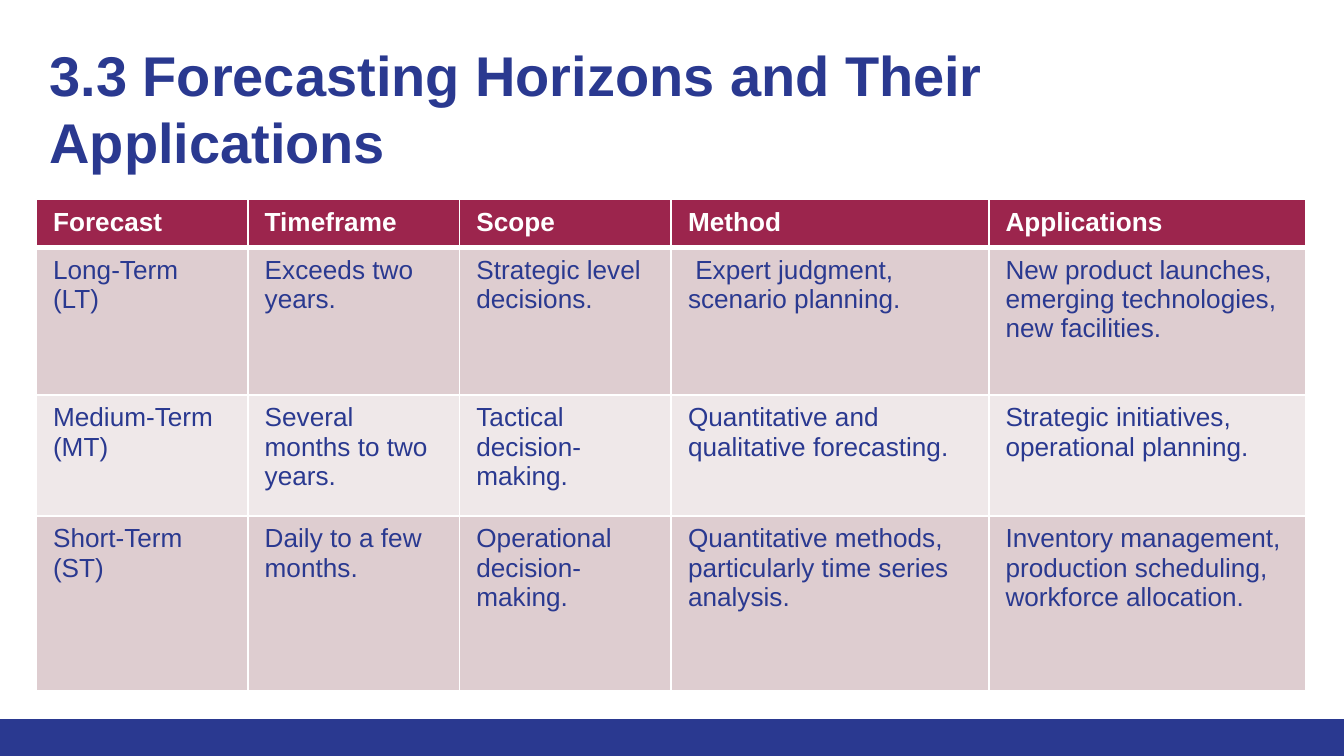
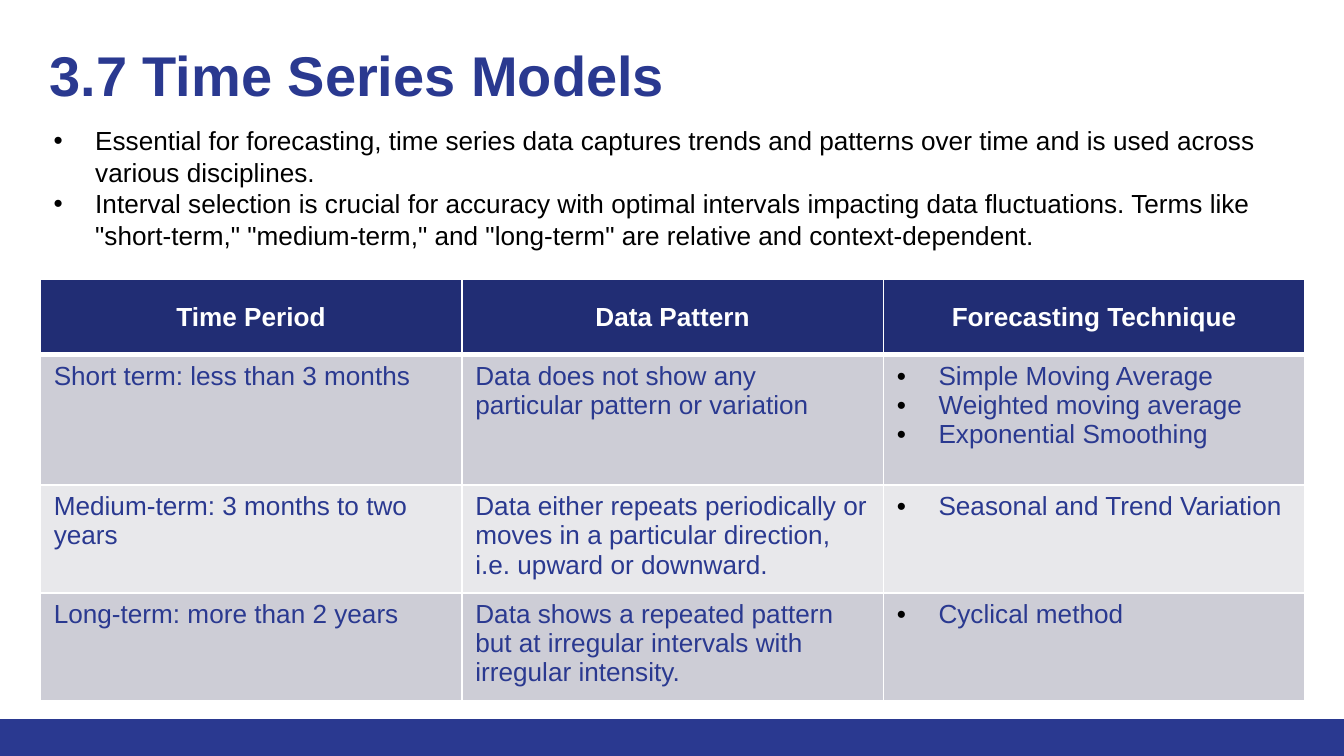
from dataclasses import dataclass

from lxml import etree
from pptx import Presentation
from pptx.dml.color import RGBColor
from pptx.enum import shapes, text
from pptx.oxml import ns
from pptx.util import Inches, Pt

BLUE = RGBColor(0x2A, 0x39, 0x90)
NAVY = RGBColor(0x21, 0x2D, 0x74)
CRIMSON = RGBColor(0x9C, 0x25, 0x4D)
ROSE = RGBColor(0xDE, 0xCD, 0xD0)
PALE_ROSE = RGBColor(0xEF, 0xE8, 0xE9)
GREY = RGBColor(0xCD, 0xCD, 0xD6)
PALE_GREY = RGBColor(0xE8, 0xE8, 0xEB)
WHITE = RGBColor(0xFF, 0xFF, 0xFF)
BLACK = RGBColor(0x00, 0x00, 0x00)

FONT = "Arial"
WIDTH = 10
HEIGHT = WIDTH * 9 / 16
BAND_TOP = 5.35
BULLET_INDENT = Inches(0.31)


@dataclass(frozen=True)
class TableStyle:
    header: RGBColor
    odd: RGBColor
    even: RGBColor
    margin_x: float = 0.1
    margin_y: float = 0.05
    centred_header: bool = False


@dataclass(frozen=True)
class TableContent:
    left: float
    top: float
    width: float
    column_shares: list[int]
    heights: list[float]
    rows: list[list[str | list[str]]]
    style: TableStyle


HORIZONS = TableContent(
    0.27, 1.48, 9.45, [2, 2, 2, 3, 3], [0.32, 1.1, 0.9, 1.3],
    [
        ["Forecast", "Timeframe", "Scope", "Method", "Applications"],
        ["Long-Term (LT)", "Exceeds two years.", "Strategic level decisions.",
         " Expert judgment, scenario planning.",
         "New product launches, emerging technologies, new facilities."],
        ["Medium-Term (MT)", "Several months to two years.", "Tactical decision-making.",
         "Quantitative and qualitative forecasting.",
         "Strategic initiatives, operational planning."],
        ["Short-Term (ST)", "Daily to a few months.", "Operational decision-making.",
         "Quantitative methods, particularly time series analysis.",
         "Inventory management, production scheduling, workforce allocation."],
    ],
    TableStyle(CRIMSON, ROSE, PALE_ROSE, margin_x=1 / 8, margin_y=1 / 16),
)

MODELS = TableContent(
    0.3, 2.08, 9.41, [1, 1, 1], [0.56, 0.97, 0.71, 0.71],
    [
        ["Time Period", "Data Pattern", "Forecasting Technique"],
        ["Short term: less than 3 months",
         "Data does not show any particular pattern or variation",
         ["Simple Moving Average", "Weighted moving average", "Exponential Smoothing"]],
        ["Medium-term: 3 months to two years",
         "Data either repeats periodically or moves in a particular direction, "
         "i.e. upward or downward.",
         ["Seasonal and Trend Variation"]],
        ["Long-term: more than 2 years",
         "Data shows a repeated pattern but at irregular intervals with irregular intensity.",
         ["Cyclical method"]],
    ],
    TableStyle(NAVY, GREY, PALE_GREY, centred_header=True),
)

MODEL_NOTES = [
    "Essential for forecasting, time series data captures trends and patterns over time "
    "and is used across various disciplines.",
    "Interval selection is crucial for accuracy with optimal intervals impacting data "
    'fluctuations. Terms like "short-term," "medium-term," and "long-term" are relative '
    "and context-dependent.",
]


def add_bullet(para) -> None:
    properties = para._p.get_or_add_pPr()
    properties.set("marL", str(BULLET_INDENT))
    properties.set("indent", str(-BULLET_INDENT))
    colour = etree.SubElement(properties, ns.qn("a:buClr"))
    etree.SubElement(colour, ns.qn("a:srgbClr"), val=str(BLACK))
    etree.SubElement(properties, ns.qn("a:buFont"), typeface=FONT)
    etree.SubElement(properties, ns.qn("a:buChar"), char="•")


def write(frame, content: str | list[str], *, size: float = 14, colour: RGBColor = BLUE,
          bold: bool = False, centred: bool = False) -> None:
    bulleted = isinstance(content, list)
    for index, line in enumerate(content if bulleted else [content]):
        para = frame.add_paragraph() if index else frame.paragraphs[0]
        para.alignment = text.PP_ALIGN.CENTER if centred else text.PP_ALIGN.LEFT
        if bulleted:
            add_bullet(para)
        span = para.add_run()
        span.text = line
        span.font.name = FONT
        span.font.size = Pt(size)
        span.font.bold = bold
        span.font.color.rgb = colour


def add_text(page, content: str | list[str], left: float, top: float, width: float,
             height: float, *, margin_y: float = 0.05, **style) -> None:
    box = page.shapes.add_textbox(*map(Inches, (left, top, width, height)))
    frame = box.text_frame
    frame.word_wrap = True
    frame.margin_left = frame.margin_right = Inches(0.1)
    frame.margin_top = frame.margin_bottom = Inches(margin_y)
    write(frame, content, **style)


def set_borders(cell, top: float, bottom: float) -> None:
    properties = cell._tc.get_or_add_tcPr()
    for side, weight in {"L": 1, "R": 1, "T": top, "B": bottom}.items():
        line = etree.SubElement(properties, ns.qn(f"a:ln{side}"), w=str(Pt(weight)))
        fill = etree.SubElement(line, ns.qn("a:solidFill"))
        etree.SubElement(fill, ns.qn("a:srgbClr"), val=str(WHITE))


def add_table(page, content: TableContent) -> None:
    style = content.style
    table = page.shapes.add_table(
        len(content.rows), len(content.column_shares), Inches(content.left),
        Inches(content.top), Inches(content.width), Inches(sum(content.heights))).table
    for column, share in zip(table.columns, content.column_shares):
        column.width = Inches(content.width * share / sum(content.column_shares))
    for index, (row, height, values) in enumerate(
            zip(table.rows, content.heights, content.rows)):
        row.height = Inches(height)
        header = index == 0
        centred = header and style.centred_header
        for cell, value in zip(row.cells, values):
            set_borders(cell, top=3 if index == 1 else 1, bottom=3 if header else 1)
            cell.fill.solid()
            cell.fill.fore_color.rgb = (
                style.header if header else style.odd if index % 2 else style.even)
            cell.margin_left = cell.margin_right = Inches(style.margin_x)
            cell.margin_top = cell.margin_bottom = Inches(style.margin_y)
            cell.vertical_anchor = text.MSO_ANCHOR.MIDDLE if centred else text.MSO_ANCHOR.TOP
            write(cell.text_frame, value, colour=WHITE if header else BLUE,
                  bold=header, centred=centred)


def add_page(deck, title: str, title_width: float):
    page = deck.slides.add_slide(deck.slide_layouts[6])
    band = page.shapes.add_shape(
        shapes.MSO_SHAPE.RECTANGLE, 0, Inches(BAND_TOP), Inches(WIDTH),
        Inches(HEIGHT - BAND_TOP))
    band.shadow.inherit = False
    band.fill.solid()
    band.fill.fore_color.rgb = BLUE
    band.line.fill.background()
    add_text(page, title, 0.27, 0.2, title_width, 0.89, margin_y=0.1, size=30, bold=True)
    return page


def main() -> None:
    deck = Presentation()
    deck.slide_width, deck.slide_height = Inches(WIDTH), Inches(HEIGHT)

    page = add_page(deck, "3.3 Forecasting Horizons and Their Applications", 9.52)
    add_table(page, HORIZONS)

    page = add_page(deck, "3.7 Time Series Models", 9.2)
    add_table(page, MODELS)
    add_text(page, MODEL_NOTES, 0.3, 0.88, 9.41, 1.04, colour=BLACK)

    deck.save("out.pptx")


if __name__ == "__main__":
    main()
